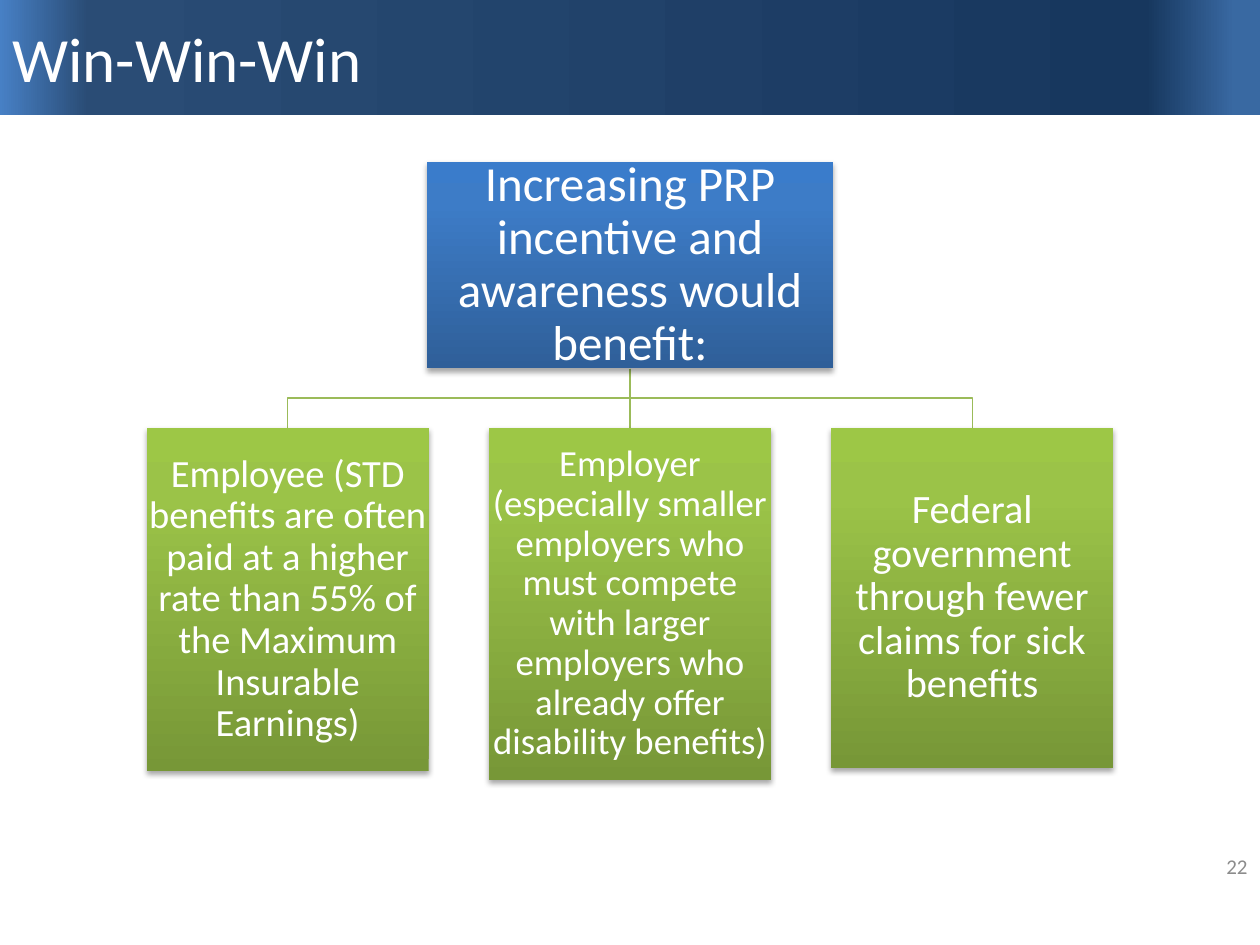
"""Build the Win-Win-Win slide with its benefit hierarchy."""
from lxml.etree import SubElement
from pptx import Presentation
from pptx.dml.color import RGBColor
from pptx.enum.shapes import MSO_SHAPE
from pptx.enum.text import MSO_ANCHOR, PP_ALIGN
from pptx.oxml.ns import qn
from pptx.util import Cm, Pt

WHITE = RGBColor(0xFF, 0xFF, 0xFF)
GREY = RGBColor(0x8C, 0x8C, 0x8C)
BLACK = RGBColor(0x00, 0x00, 0x00)
GREEN = RGBColor(0x9B, 0xBB, 0x59)
BANNER_STOPS = (
    (2, RGBColor(0x39, 0x69, 0xA2)),
    (9, RGBColor(0x17, 0x37, 0x5E)),
    (93, RGBColor(0x2A, 0x4C, 0x75)),
    (100, RGBColor(0x47, 0x80, 0xC5)),
)
BLUE_STOPS = (
    (0, RGBColor(0x2F, 0x5F, 0x99)),
    (80, RGBColor(0x3D, 0x7C, 0xC7)),
    (100, RGBColor(0x3A, 0x7C, 0xCB)),
)
GREEN_STOPS = (
    (0, RGBColor(0x77, 0x97, 0x37)),
    (80, RGBColor(0x9B, 0xC3, 0x48)),
    (100, RGBColor(0x9D, 0xC7, 0x46)),
)

SLIDE_WIDTH, SLIDE_HEIGHT = 25.4, 19.05
ROOT_TOP, ROOT_WIDTH, ROOT_HEIGHT = 3.27, 8.18, 4.16
CHILD_TOP, CHILD_WIDTH, CHILD_PITCH = 8.62, 5.69, 6.9
CHILDREN = (
    ("Employee (STD benefits are often paid at a higher rate than 55% of "
     "the Maximum Insurable Earnings)", 22, 6.93, 0.05),
    ("Employer (especially smaller employers who must compete with larger "
     "employers who already offer disability benefits)", 21, 7.11, 0.03),
    ("Federal government through fewer claims for sick benefits", 23, 6.86, 0.05),
)


class HierarchySlide:
    """Hold the style and the current slide."""

    def __init__(self, slide, font_name="Calibri"):
        self.slide = slide
        self.font_name = font_name

    def set_text(self, shape, text, size, color, alignment, margins=None, spacing=1.0):
        frame = shape.text_frame
        frame_format = {"word_wrap": True, "vertical_anchor": MSO_ANCHOR.MIDDLE}
        if margins is not None:
            for side in ("left", "right", "top", "bottom"):
                frame_format[f"margin_{side}"] = Cm(margins)
        for name, value in frame_format.items():
            setattr(frame, name, value)
        paragraph = frame.paragraphs[0]
        for name, value in {"alignment": alignment, "line_spacing": spacing}.items():
            setattr(paragraph, name, value)
        run = paragraph.add_run()
        run.text = text
        for name, value in {"name": self.font_name, "size": Pt(size)}.items():
            setattr(run.font, name, value)
        run.font.color.rgb = color

    def gradient_box(self, left, top, width, height, stops, angle):
        shape = self.slide.shapes.add_shape(
            MSO_SHAPE.RECTANGLE, Cm(left), Cm(top), Cm(width), Cm(height))
        shape.shadow.inherit = False
        shape.line.fill.background()
        shape.fill.background()
        properties = shape.element.spPr
        gradient = SubElement(properties, qn("a:gradFill"), rotWithShape="1")
        stop_list = SubElement(gradient, qn("a:gsLst"))
        for position, color in stops:
            stop = SubElement(stop_list, qn("a:gs"), pos=str(position * 1000))
            SubElement(stop, qn("a:srgbClr"), val=str(color))
        SubElement(gradient, qn("a:lin"), ang=str(angle * 60000), scaled="0")
        properties.replace(properties.find(qn("a:noFill")), gradient)
        return shape

    def add_shadow(self, shape):
        effects = shape.element.spPr.find(qn("a:effectLst"))
        shadow = SubElement(
            effects, qn("a:outerShdw"), blurRad=str(Pt(3.1)), dist=str(Pt(1.8)),
            dir=str(90 * 60000), rotWithShape="0")
        color = SubElement(shadow, qn("a:srgbClr"), val=str(BLACK))
        SubElement(color, qn("a:alpha"), val="35000")

    def node(self, center, top, width, height, stops, text, size, margins):
        shape = self.gradient_box(center - width / 2, top, width, height, stops, 270)
        self.add_shadow(shape)
        self.set_text(shape, text, size, WHITE, PP_ALIGN.CENTER, margins, 0.9)

    def branch(self, points):
        corners = [(Cm(x), Cm(y)) for x, y in points]
        builder = self.slide.shapes.build_freeform(*corners[0])
        builder.add_line_segments(corners[1:], close=False)
        shape = builder.convert_to_shape()
        shape.shadow.inherit = False
        shape.fill.background()
        shape.line.color.rgb = GREEN
        shape.line.width = Pt(0.75)

    def banner(self, text):
        shape = self.gradient_box(0, 0, SLIDE_WIDTH, 2.33, BANNER_STOPS, 180)
        self.set_text(shape, text, 36, WHITE, PP_ALIGN.LEFT)

    def page_number(self, text):
        shape = self.slide.shapes.add_textbox(Cm(19.48), Cm(16.95), Cm(5.92), Cm(1.01))
        self.set_text(shape, text, 12, GREY, PP_ALIGN.RIGHT)


def main():
    presentation = Presentation()
    presentation.slide_width = Cm(SLIDE_WIDTH)
    presentation.slide_height = Cm(SLIDE_HEIGHT)
    page = HierarchySlide(presentation.slides.add_slide(presentation.slide_layouts[6]))
    page.banner("Win-Win-Win")
    page.page_number("22")

    middle = SLIDE_WIDTH / 2
    root_bottom = ROOT_TOP + ROOT_HEIGHT
    joint = (root_bottom + CHILD_TOP) / 2
    centers = [middle + offset * CHILD_PITCH for offset in (-1, 0, 1)]
    for center in centers:
        bend = [] if center == middle else [(middle, joint), (center, joint)]
        page.branch([(middle, root_bottom), *bend, (center, CHILD_TOP)])

    page.node(middle, ROOT_TOP, ROOT_WIDTH, ROOT_HEIGHT, BLUE_STOPS,
              "Increasing PRP incentive and awareness would benefit:", 28, 0.05)
    for center, (text, size, height, margins) in zip(centers, CHILDREN):
        page.node(center, CHILD_TOP, CHILD_WIDTH, height, GREEN_STOPS,
                  text, size, margins)
    presentation.save("out.pptx")


if __name__ == "__main__":
    main()
